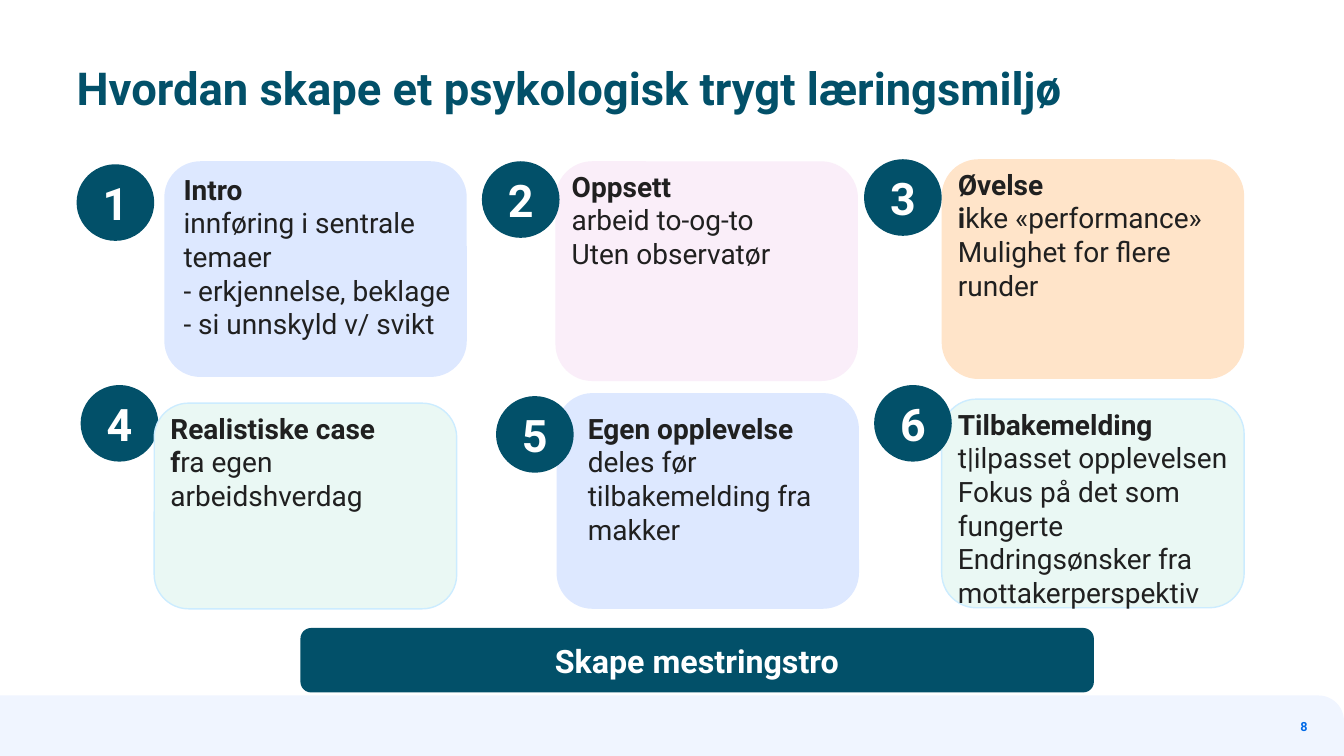
"""Build the slide on creating a psychologically safe learning environment."""
from pptx import Presentation
from pptx.dml.color import RGBColor
from pptx.enum.shapes import MSO_SHAPE
from pptx.enum.text import MSO_ANCHOR, MSO_AUTO_SIZE, PP_ALIGN
from pptx.util import Pt

PX = 9144
TEAL = RGBColor(0x02, 0x50, 0x69)
INK = RGBColor(0x20, 0x20, 0x20)
WHITE = RGBColor(0xFF, 0xFF, 0xFF)
PAGE_BLUE = RGBColor(0x00, 0x69, 0xE7)
FOOTER = RGBColor(0xF0, 0xF5, 0xFF)
BLUE = RGBColor(0xDD, 0xE8, 0xFF)
PINK = RGBColor(0xFA, 0xEE, 0xF9)
ORANGE = RGBColor(0xFF, 0xE4, 0xC9)
MINT = RGBColor(0xEA, 0xF8, 0xF4)
OUTLINE = RGBColor(0xCC, 0xEC, 0xFF)

prs = Presentation()
prs.slide_width, prs.slide_height = 1333 * PX, 750 * PX
slide = prs.slides.add_slide(prs.slide_layouts[5])


def add_block(preset, box, fill, outline=None):
    block = slide.shapes.add_shape(preset, *[n * PX for n in box])
    block.shadow.inherit = False
    block.fill.solid()
    block.fill.fore_color.rgb = fill
    if outline:
        block.line.color.rgb = outline
        block.line.width = Pt(1)
    else:
        block.line.fill.background()
    return block


def write(holder, lines, size, color, align=PP_ALIGN.LEFT, anchor=MSO_ANCHOR.TOP):
    frame = holder.text_frame
    frame.word_wrap = True
    frame.auto_size = MSO_AUTO_SIZE.NONE
    frame.vertical_anchor = anchor
    frame.margin_left = frame.margin_right = frame.margin_top = frame.margin_bottom = 0
    for index, (bold_part, plain_part) in enumerate(lines):
        paragraph = frame.add_paragraph() if index else frame.paragraphs[0]
        paragraph.alignment = align
        for text, bold in ((bold_part, True), (plain_part, False)):
            if text:
                run = paragraph.add_run()
                run.text = text
                run.font.name = "Roboto"
                run.font.size = Pt(size)
                run.font.bold = bold
                run.font.color.rgb = color


footer = add_block(MSO_SHAPE.ROUND_1_RECTANGLE, (0, 690, 1333, 60), FOOTER)
footer.adjustments[0] = 0.42

title = slide.shapes.title
title.left, title.top, title.width, title.height = [n * PX for n in (76, 60, 1063, 114)]
write(title, [("Hvordan skape et psykologisk trygt læringsmiljø", "")], 32.4, TEAL)

page_number = slide.shapes.add_textbox(*[n * PX for n in (1139, 707, 158, 27)])
write(page_number, [("8", "")], 9, PAGE_BLUE, PP_ALIGN.RIGHT, MSO_ANCHOR.MIDDLE)

steps = [
    ((163, 160, 300, 214), BLUE, None, (76, 163), (182, 171, 265),
     [("Intro", ""), ("", "innføring i sentrale temaer"),
      ("", "- erkjennelse, beklage"), ("", "- si unnskyld v/ svikt")]),
    ((551, 160, 300, 218), PINK, None, (478, 160), (567, 168, 265),
     [("Oppsett", ""), ("", "arbeid to-og-to"), ("", "Uten observatør")]),
    ((934, 158, 300, 218), ORANGE, None, (857, 158), (950, 166, 268),
     [("Øvelse", ""), ("i", "kke «performance»"), ("", "Mulighet for flere runder")]),
    ((153, 400, 300, 204), MINT, OUTLINE, (80, 382), (169, 408, 265),
     [("Realistiske case", ""), ("f", "ra egen arbeidshverdag")]),
    ((552, 390, 300, 214), BLUE, None, (492, 393), (583, 408, 265),
     [("Egen opplevelse", ""), ("", "deles før tilbakemelding fra makker")]),
    ((934, 396, 300, 207), MINT, OUTLINE, (867, 382), (950, 404, 279),
     [("Tilbakemelding", ""), ("", "t|ilpasset opplevelsen Fokus på det som fungerte"),
      ("", "Endringsønsker fra mottakerperspektiv")]),
]
for number, (card, fill, outline, badge_corner, (left, top, width), lines) in enumerate(steps, 1):
    badge_behind = number == 4
    if not badge_behind:
        add_block(MSO_SHAPE.ROUNDED_RECTANGLE, card, fill, outline)
    badge = add_block(MSO_SHAPE.FLOWCHART_CONNECTOR, (*badge_corner, 77, 76), TEAL)
    write(badge, [(str(number), "")], 32, WHITE, PP_ALIGN.CENTER, MSO_ANCHOR.MIDDLE)
    if badge_behind:
        add_block(MSO_SHAPE.ROUNDED_RECTANGLE, card, fill, outline)
    body = slide.shapes.add_textbox(left * PX, top * PX, width * PX, 200 * PX)
    write(body, lines, 20, INK)

goal = add_block(MSO_SHAPE.ROUNDED_RECTANGLE, (298, 623, 787, 64), TEAL)
write(goal, [("Skape mestringstro", "")], 23, WHITE, PP_ALIGN.CENTER, MSO_ANCHOR.MIDDLE)

prs.save("out.pptx")
